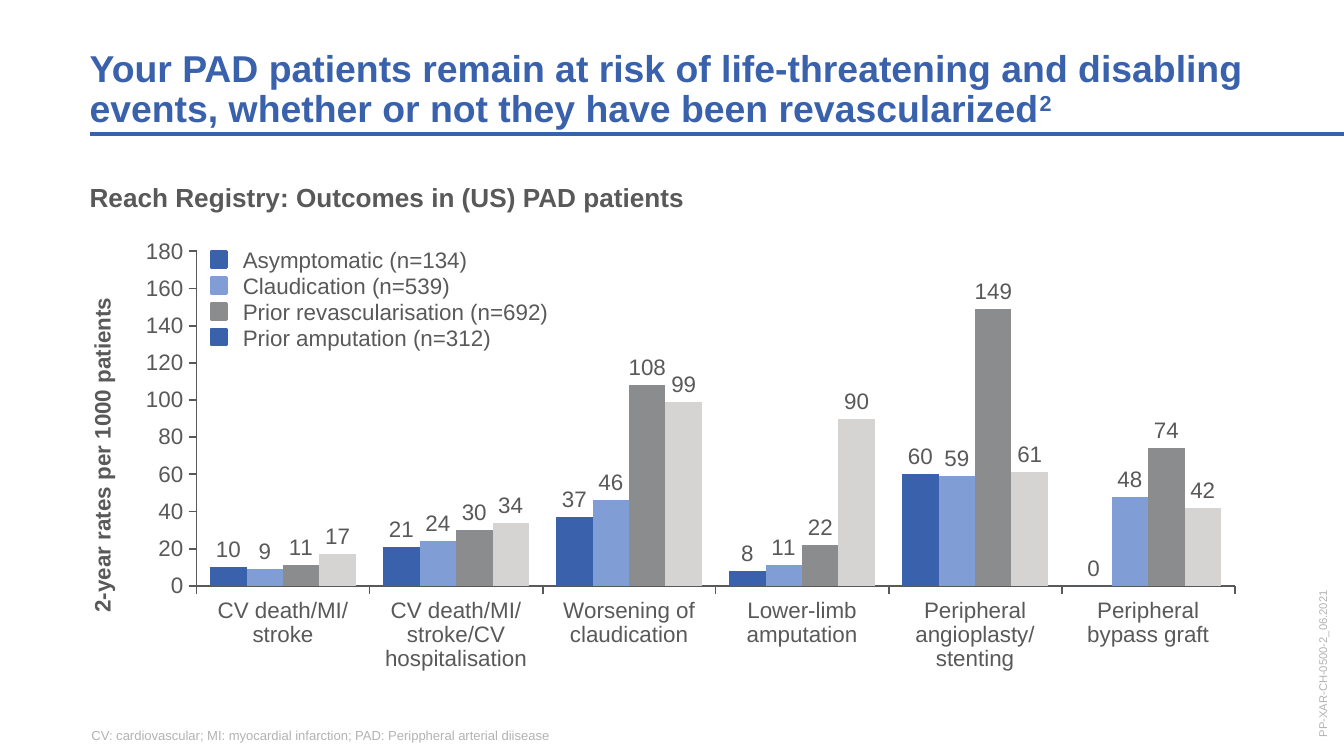
from pptx import Presentation as Deck
from pptx.chart.data import CategoryChartData as Data
from pptx.dml.color import RGBColor as Rgb
from pptx.enum.chart import XL_CHART_TYPE as Kind, XL_LABEL_POSITION as Spot, XL_TICK_MARK as Tick
from pptx.enum.shapes import MSO_CONNECTOR as Link, MSO_SHAPE as Form
from pptx.enum.text import MSO_ANCHOR as Anchor
from pptx.oxml import parse_xml
from pptx.oxml.ns import nsdecls, qn
from pptx.util import Pt
from lxml.etree import SubElement as Sub

BLUE, SKY, GREY, PALE = "3961AC", "809ED5", "8A8C8E", "D5D4D2"
INK, FAINT = "595959", "B3B2B5"
GROUPS = ["CV death/MI/ stroke", "CV death/MI/ stroke/CV hospitalisation",
          "Worsening of claudication", "Lower-limb amputation",
          "Peripheral angioplasty/ stenting", "Peripheral bypass graft"]
SERIES = [
    ("Series 1", BLUE, (10, 21, 37, 8, 60, 0)),
    ("Series 2", SKY, (9, 24, 46, 11, 59, 48)),
    ("Series 3", GREY, (11, 30, 108, 22, 149, 74)),
    ("Series 4", PALE, (17, 34, 99, 90, 61, 42)),
]
KEYS = [("Asymptomatic (n=134)", BLUE, 143), ("Claudication (n=539)", SKY, 143),
        ("Prior revascularisation (n=692)", GREY, 181), ("Prior amputation (n=312)", BLUE, 200)]
PLOT = {"x": 0.104, "y": 0.114, "w": 0.853, "h": 0.688}


def put(item, vals):
    for name, val in vals.items():
        setattr(item, name, val)


def tint(hue):
    return Rgb.from_string(hue)


def style(font, size, hue, bold=False):
    put(font, {"name": "Arial", "size": Pt(size), "bold": bold})
    font.color.rgb = tint(hue)


def stroke(line, hue, width):
    line.color.rgb = tint(hue)
    line.width = Pt(width)


def paint(fill, hue):
    fill.solid()
    fill.fore_color.rgb = tint(hue)


def add_text(shapes, area, text, size, hue, bold=False, pad=(0, 0), frame=None, para=None):
    box = shapes.add_textbox(*map(Pt, area))
    body = box.text_frame
    side, top = map(Pt, pad)
    put(body, {"word_wrap": True, "margin_left": side, "margin_right": side,
               "margin_top": top, "margin_bottom": top, **(frame or {})})
    line = body.paragraphs[0]
    put(line, para or {})
    run = line.add_run()
    run.text = text
    style(run.font, size, hue, bold)
    return box


def add_title(shapes):
    box = add_text(shapes, (48, 26, 652, 44),
                   "Your PAD patients remain at risk of life-threatening and disabling "
                   "events, whether or not they have been revascularized",
                   20, BLUE, True, frame={"vertical_anchor": Anchor.BOTTOM},
                   para={"line_spacing": 0.9})
    note = box.text_frame.paragraphs[0].add_run()
    note.text = "2"
    style(note.font, 20, BLUE, True)
    note.font._element.set("baseline", "30000")


def add_rule(shapes):
    rule = shapes.add_connector(Link.STRAIGHT, Pt(48), Pt(72), Pt(720), Pt(72))
    stroke(rule.line, BLUE, 2.25)
    Sub(rule._element.spPr, qn("a:effectLst"))


def set_plot(chart):
    tags = [f'<c:{mode}Mode val="edge"/>' for mode in "xy"]
    tags += [f'<c:{key} val="{val}"/>' for key, val in PLOT.items()]
    area = chart._chartSpace.chart.plotArea
    for old in area.findall(qn("c:layout")):
        area.remove(old)
    area.insert(0, parse_xml(
        f'<c:layout {nsdecls("c")}><c:manualLayout><c:layoutTarget val="inner"/>'
        f'{"".join(tags)}</c:manualLayout></c:layout>'))


def add_bars(shapes):
    data = Data(number_format="#,##0")
    data.categories = GROUPS
    for name, _, vals in SERIES:
        data.add_series(name, vals)
    chart = shapes.add_chart(Kind.COLUMN_CLUSTERED, Pt(37.5), Pt(105), Pt(652), Pt(260.5), data).chart
    put(chart, {"has_legend": False, "has_title": False})
    style(chart.font, 12, INK)
    set_plot(chart)
    for axis in (chart.category_axis, chart.value_axis):
        put(axis, {"has_major_gridlines": False, "major_tick_mark": Tick.OUTSIDE,
                   "minor_tick_mark": Tick.NONE})
        stroke(axis.format.line, INK, 1)
        style(axis.tick_labels.font, 12, INK)
    scale = chart.value_axis
    put(scale, {"minimum_scale": 0, "maximum_scale": 180, "major_unit": 20})
    label = scale.axis_title.text_frame
    label.text = "2-year rates per 1000 patients"
    style(label.paragraphs[0].runs[0].font, 12, INK, True)
    plot = chart.plots[0]
    put(plot, {"gap_width": 75, "overlap": 0, "vary_by_categories": False})
    for bars, (_, hue, _) in zip(plot.series, SERIES):
        paint(bars.format.fill, hue)
        bars.invert_if_negative = False
        marks = bars.data_labels
        put(marks, {"show_value": True, "position": Spot.OUTSIDE_END,
                    "number_format": "#,##0", "number_format_is_linked": False})
        style(marks.font, 12, INK)


def add_keys(shapes):
    group = shapes.add_group_shape().shapes
    for row, (text, hue, width) in enumerate(KEYS):
        top = 134.6 + 13.9 * row
        chip = group.add_shape(Form.RECTANGLE, Pt(113), Pt(top), Pt(8.6), Pt(8.6))
        chip.shadow.inherit = False
        paint(chip.fill, hue)
        stroke(chip.line, hue, 1.5)
        add_text(group, (123, top - 6.6, width, 22), text, 12, INK, pad=(7.2, 3.6),
                 frame={"vertical_anchor": Anchor.MIDDLE})


def main():
    deck = Deck()
    put(deck, {"slide_width": Pt(720), "slide_height": Pt(405)})
    shapes = deck.slides.add_slide(deck.slide_layouts[6]).shapes
    add_rule(shapes)
    add_title(shapes)
    add_text(shapes, (48, 97, 652, 24), "Reach Registry: Outcomes in (US) PAD patients",
             14, INK, True, para={"space_before": Pt(6)})
    add_bars(shapes)
    add_keys(shapes)
    add_text(shapes, (49, 389.5, 652, 8.5),
             "CV: cardiovascular; MI: myocardial infarction; PAD: Perippheral arterial diisease",
             7, FAINT, frame={"vertical_anchor": Anchor.BOTTOM}, para={"space_before": Pt(2)})
    code = add_text(shapes, (658, 333.5, 101, 22), "PP-XAR-CH-0500-2_06.2021", 6, FAINT,
                    frame={"vertical_anchor": Anchor.MIDDLE, "word_wrap": False})
    code.rotation = 270
    deck.save("out.pptx")


if __name__ == "__main__":
    main()
